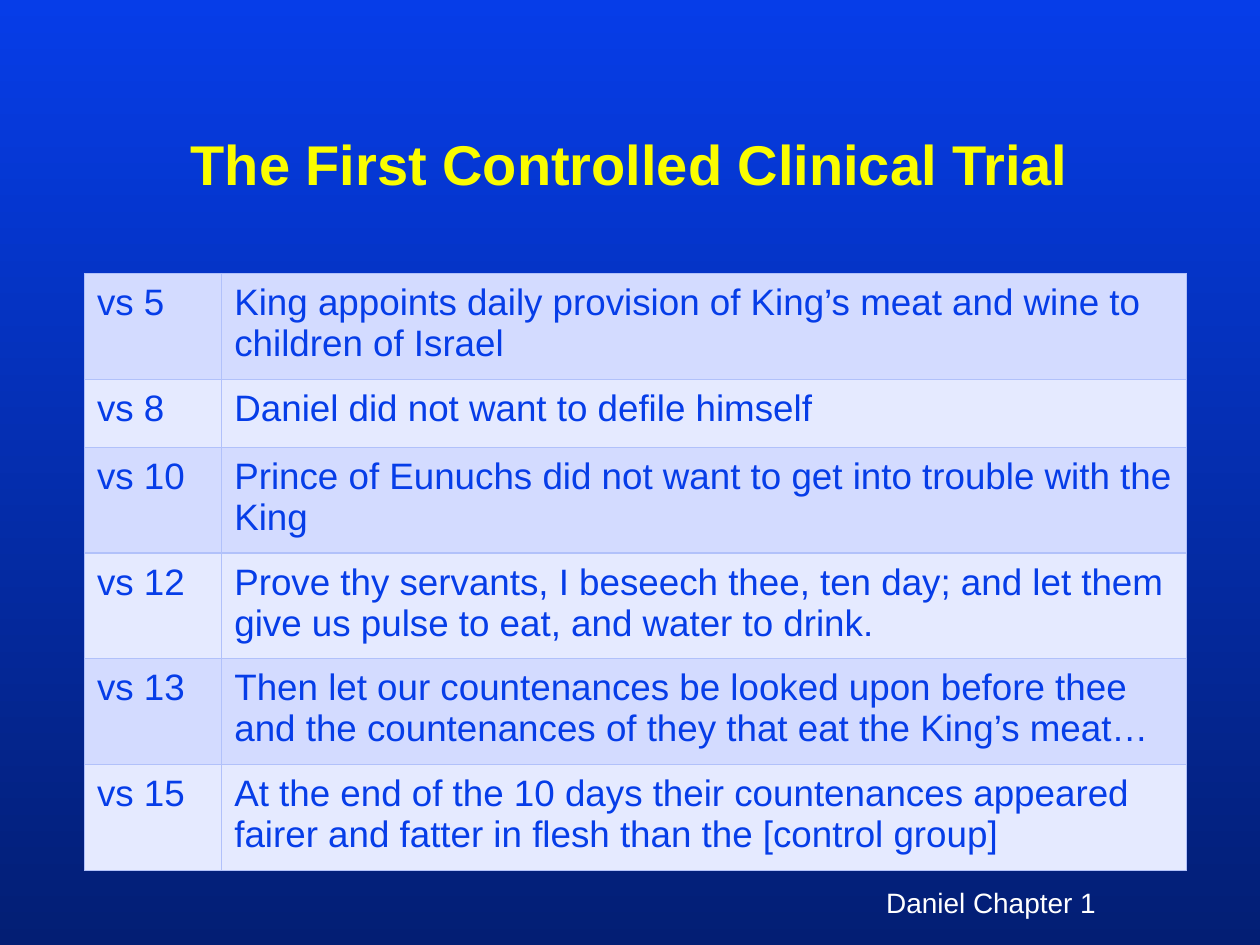
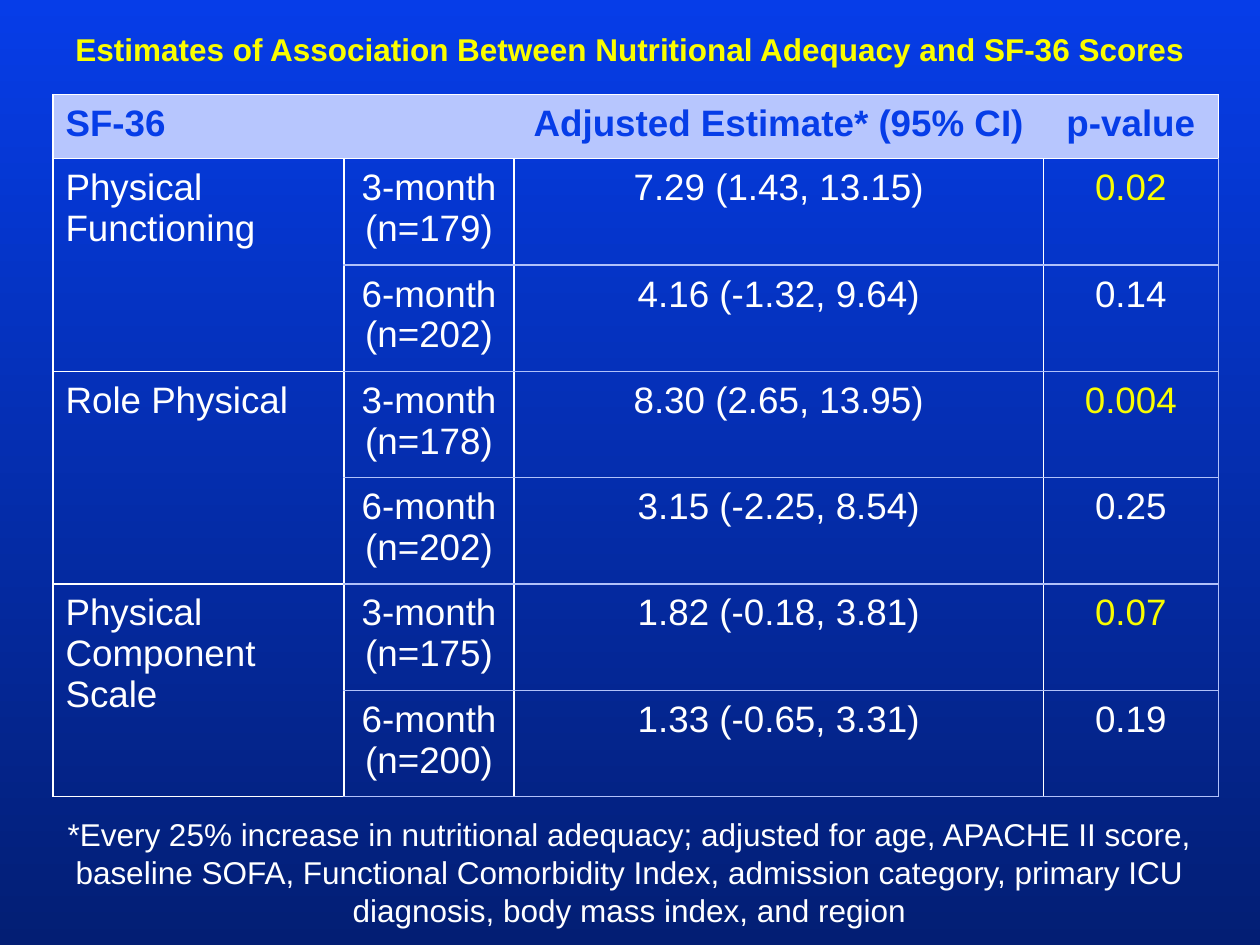
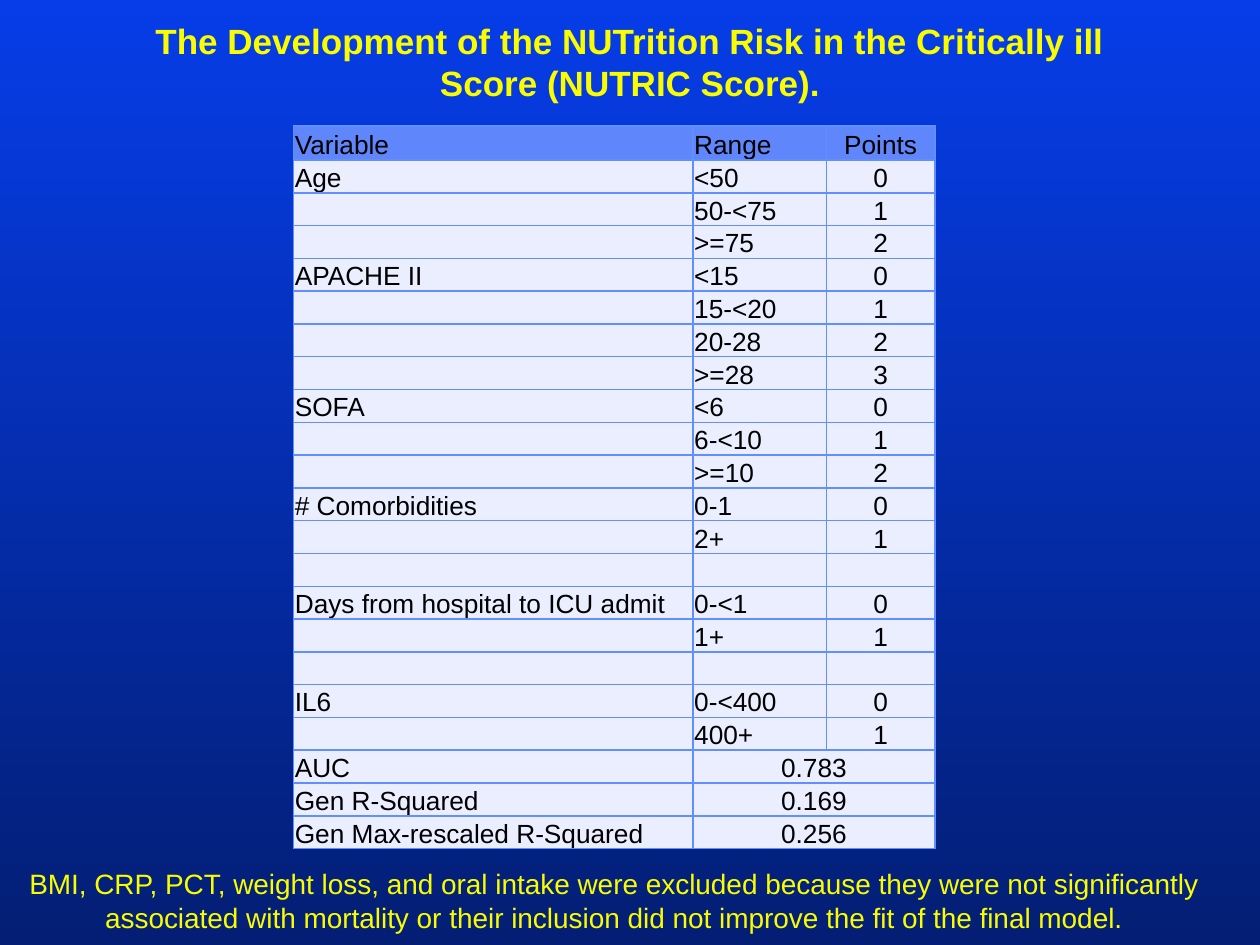
from lxml.etree import SubElement as Sub
from pptx import Presentation
from pptx.dml.color import RGBColor as Rgb
from pptx.enum.text import MSO_ANCHOR as Anchor, PP_ALIGN as Align
from pptx.oxml.ns import qn
from pptx.util import Pt

PX = 9144  # 100 px to the inch
FONT = "Arial"
INK = dict(top="063DE8", low="031E74", gold="FAFD00", white="FFFFFF", black="000000",
           pale="B1C1FA", band="D3DBFF", light="E5EAFF", head="B7C6FE",
           blue="6086FB", rule="618FFD", mist="EAEEFF")


def write(host, text, size=18, ink="white", bold=False, mid=True,
          at=None, anchor=Anchor.TOP, wrap=True):
    """Write text in a cell, or in a new text box when a place is given."""
    if at:
        host = host.shapes.add_textbox(*[n * PX for n in at])
        host.text_frame.vertical_anchor = anchor
        host.text_frame.word_wrap = wrap
    frame = host.text_frame
    for i, line in enumerate(text.split("\n")):
        para = frame.add_paragraph() if i else frame.paragraphs[0]
        para.alignment = Align.CENTER if mid else Align.LEFT
        if not line:  # keeps an empty cell from growing its row
            para._p.get_or_add_endParaRPr().set("sz", str(size * 100))
            continue
        run = para.add_run()
        run.text = line
        font = run.font
        font.name, font.size, font.bold = FONT, Pt(size), bold
        font.color.rgb = Rgb.from_string(INK[ink])


def build(slide, spot, cols, rows, data, look, edge, size=21,
          pad=(10, 7, 10, 7), anchor=Anchor.TOP, spans=()):
    """Add a table; look(r, c) gives fill and text format, edge(r, c) the L R T B lines."""
    area = [*spot, sum(cols), sum(rows)]
    table = slide.shapes.add_table(len(rows), len(cols), *[int(n * PX) for n in area]).table
    table.first_row = table.horz_banding = False
    for col, wide in zip(table.columns, cols):
        col.width = wide * PX
    for row, high in zip(table.rows, rows):
        row.height = int(high * PX)
    for r, line in enumerate(data):
        for c, text in enumerate(line):
            cell = table.cell(r, c)
            fill, form = look(r, c)
            write(cell, text, size=size, **form)
            cell.vertical_anchor = anchor
            (cell.margin_left, cell.margin_top,
             cell.margin_right, cell.margin_bottom) = [n * PX for n in pad]
            if fill:
                cell.fill.solid()
                cell.fill.fore_color.rgb = Rgb.from_string(INK[fill])
            else:
                cell.fill.background()
            props = cell._tc.get_or_add_tcPr()
            for i, (side, ink) in enumerate(zip("LRTB", edge(r, c))):
                wide = 0.75 if ink == "pale" else 1
                ln = Sub(props, qn("a:ln" + side), w=str(Pt(wide)))
                if ink:
                    Sub(Sub(ln, qn("a:solidFill")), qn("a:srgbClr"), val=INK[ink])
                else:
                    Sub(ln, qn("a:noFill"))
                props.insert(i, ln)
    for r, c, r2, c2 in spans:
        table.cell(r, c).merge(table.cell(r2, c2))


deck = Presentation()
deck.slide_width, deck.slide_height = 1000 * PX, 750 * PX

# Backgrounds and titles
titles = [
    ("The First Controlled Clinical Trial", 32, (75, 67, 850, 125)),
    ("Estimates of Association Between Nutritional Adequacy and SF-36 Scores",
     18, (25, -3, 950, 83)),
    ("The Development of the NUTrition Risk in the Critically ill Score (NUTRIC Score).",
     20, (75, -14, 850, 125)),
]
slides = []
for text, size, at in titles:
    slide = deck.slides.add_slide(deck.slide_layouts[6])
    fill = slide.background.fill
    fill.gradient()
    fill.gradient_angle = 270
    for stop, ink in zip(fill.gradient_stops, ("top", "low")):
        stop.color.rgb = Rgb.from_string(INK[ink])
    write(slide, text, size=size, ink="gold", bold=True, at=at, anchor=Anchor.MIDDLE)
    slides.append(slide)
trial, scores, risk = slides

# Slide 1: verses
verses = [
    ("vs 5", "King appoints daily provision of King’s meat and wine to children of Israel"),
    ("vs 8", "Daniel did not want to defile himself"),
    ("vs 10", "Prince of Eunuchs did not want to get into trouble with the King"),
    ("vs 12", "Prove thy servants, I beseech thee, ten day; and let them give us pulse "
              "to eat, and water to drink."),
    ("vs 13", "Then let our countenances be looked upon before thee and the countenances "
              "of they that eat the King’s meat…"),
    ("vs 15", "At the end of the 10 days their countenances appeared fairer and fatter "
              "in flesh than the [control group]"),
]
build(trial, (67, 217), [109, 766], [84, 54, 84, 84, 84, 84], verses,
      look=lambda r, c: ("light" if r % 2 else "band", dict(ink="top", mid=False)),
      edge=lambda r, c: ["pale"] * 4)
write(trial, "Daniel Chapter 1", size=16, at=(692, 698, 189, 37),
      anchor=Anchor.MIDDLE, wrap=False)

# Slide 2: estimates
rates = [
    ("SF-36", "", "Adjusted Estimate* (95% CI)", "p-value"),
    ("Physical Functioning", "3-month\n(n=179)", "7.29 (1.43, 13.15)", "0.02"),
    ("", "6-month\n(n=202)", "4.16 (-1.32, 9.64)", "0.14"),
    ("Role Physical", "3-month\n(n=178)", "8.30 (2.65, 13.95)", "0.004"),
    ("", "6-month\n(n=202)", "3.15 (-2.25, 8.54)", "0.25"),
    ("Physical Component Scale", "3-month\n(n=175)", "1.82 (-0.18, 3.81)", "0.07"),
    ("", "6-month\n(n=200)", "1.33 (-0.65, 3.31)", "0.19"),
]


def rate_look(r, c):
    if r == 0:
        return "head", dict(ink="top", bold=True, mid=c > 0)
    return None, dict(ink="gold" if c == 3 and r % 2 else "white", mid=c > 0)


def rate_edge(r, c):
    if r == 0:
        return [None if c else "white", "white" if c == 3 else None, "white", "white"]
    if c == 0:
        return ["white"] * 4
    return ["white", "pale" if c == 3 else "white", "white" if r == 1 else "pale", "pale"]


build(scores, (42, 75), [231, 135, 420, 139], [51] + [84.4] * 6, rates, rate_look, rate_edge,
      spans=[(r, 0, r + 1, 0) for r in (1, 3, 5)])
write(scores, "*Every 25% increase in nutritional adequacy; adjusted for age, APACHE II score, "
      "baseline SOFA, Functional Comorbidity Index, admission category, primary ICU diagnosis, "
      "body mass index, and region", at=(8, 642, 983, 101))

# Slide 3: points by variable
groups = [
    ("Age", ["<50", "50-<75", ">=75"]),
    ("APACHE II", ["<15", "15-<20", "20-28", ">=28"]),
    ("SOFA", ["<6", "6-<10", ">=10"]),
    ("# Comorbidities", ["0-1", "2+"]),
    ("Days from hospital to ICU admit", ["0-<1", "1+"]),
    ("IL6", ["0-<400", "400+"]),
]
points = [("Variable", "Range", "Points")]
for name, spread in groups:
    for mark, span in enumerate(spread):
        points.append(("" if mark else name, span, str(mark)))
    if name.startswith(("#", "Days")):
        points.append(("", "", ""))
fits = [("AUC", "0.783"), ("Gen R-Squared", "0.169"), ("Gen Max-rescaled R-Squared", "0.256")]
first = len(points)
points += [(name, fit, "") for name, fit in fits]
step = (566 - 27) / (len(points) - 1)
build(risk, (233, 100), [317, 106, 86], [27] + [step] * (len(points) - 1), points,
      look=lambda r, c: ("mist" if r else "blue",
                         dict(ink="black", mid=c == 2 or (c == 1 and r >= first))),
      edge=lambda r, c: ["rule"] * 4, size=15, pad=(1, 1, 1, 0), anchor=Anchor.BOTTOM,
      spans=[(r, 1, r, 2) for r in range(first, len(points))])
write(risk, "BMI, CRP, PCT, weight loss, and oral intake were excluded because they were not "
      "significantly associated with mortality or their inclusion did not improve the fit "
      "of the final model.", size=16, ink="gold", at=(0, 683, 975, 64))

deck.save("out.pptx")
